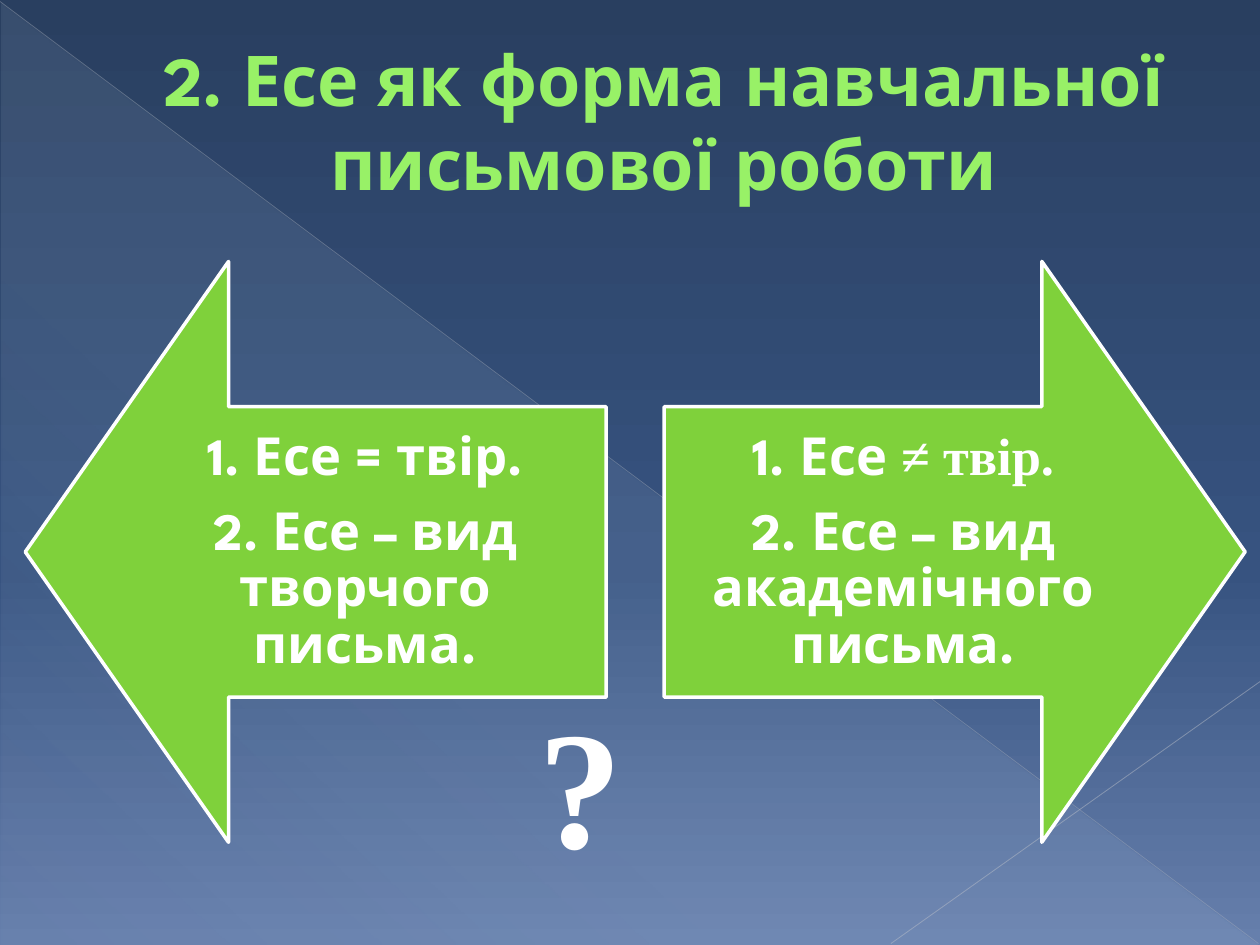
from dataclasses import dataclass

from pptx import Presentation
from pptx.dml.color import RGBColor
from pptx.enum.shapes import MSO_CONNECTOR, MSO_SHAPE
from pptx.enum.text import MSO_ANCHOR, MSO_AUTO_SIZE, PP_ALIGN
from pptx.oxml import parse_xml
from pptx.oxml.ns import qn
from pptx.util import Cm, Pt

NS = 'xmlns:a="http://schemas.openxmlformats.org/drawingml/2006/main"'
CENTER, MIDDLE, NO_FIT = PP_ALIGN.CENTER, MSO_ANCHOR.MIDDLE, MSO_AUTO_SIZE.NONE
STRAIGHT = MSO_CONNECTOR.STRAIGHT
TRIANGLE, UP_ARROW = MSO_SHAPE.RIGHT_TRIANGLE, MSO_SHAPE.UP_ARROW
SANS, SERIF = "League Spartan", "Times New Roman"
COLORS = {
    "sky_top": "293F60", "sky_middle": "375380", "sky_bottom": "667FAC",
    "glow": "D6ECFF", "long_ray": "B7BCC5", "short_ray": "BFC3CB",
    "title": "98F167", "title_edge": "589129", "arrow": "7FD13B", "white": "FFFFFF",
}


@dataclass
class Stop:
    position: int
    color: str
    opacity: int = 100


@dataclass
class Ray:
    start: tuple[float, float]
    end: tuple[float, float]
    color: str
    width: float
    opacity: int


@dataclass
class Span:
    text: str
    font: str = SANS


@dataclass
class Opinion:
    arrow_left: float
    text_left: float
    rotation: int
    paragraphs: list[list[Span]]


RAYS = [
    Ray((0, 0.03), (25.37, 19.02), "long_ray", 0.39, 35),
    Ray((25.4, 13.74), (17.96, 19.02), "short_ray", 0.47, 45),
]
OPINIONS = [
    Opinion(0.51, 2.54, 270, [
        [Span("1. Есе = твір.")],
        [Span("2. Есе – вид творчого письма.")],
    ]),
    Opinion(13.39, 13.39, 90, [
        [Span("1. Есе "), Span("≠ твір.", SERIF)],
        [Span("2. Есе – вид академічного письма.")],
    ]),
]


def rgb(name: str) -> RGBColor:
    return RGBColor.from_string(COLORS[name])


def gradient(stops: list[Stop], angle: int):
    marks = "".join(
        f'<a:gs pos="{stop.position * 1000}"><a:srgbClr val="{COLORS[stop.color]}">'
        f'<a:alpha val="{stop.opacity * 1000}"/></a:srgbClr></a:gs>'
        for stop in stops
    )
    return parse_xml(
        f'<a:gradFill {NS} rotWithShape="1"><a:gsLst>{marks}</a:gsLst>'
        f'<a:lin ang="{angle * 60000}" scaled="0"/></a:gradFill>'
    )


def use_gradient(fill, parent, stops: list[Stop], angle: int) -> None:
    fill.solid()
    solid = parent.find(".//" + qn("a:solidFill"))
    solid.getparent().replace(solid, gradient(stops, angle))


def add_span(para, span: Span, size: int, color: str = "white"):
    run = para.add_run()
    run.text = span.text
    run.font.name = span.font
    run.font.size = Pt(size)
    run.font.bold = True
    run.font.color.rgb = rgb(color)
    return run


def draw_backdrop(page) -> None:
    use_gradient(page.background.fill, page.element, [
        Stop(0, "sky_top"), Stop(60, "sky_middle"), Stop(100, "sky_bottom"),
    ], 90)
    glow = page.shapes.add_shape(TRIANGLE, Cm(0.03), Cm(0.05), Cm(25.35), Cm(19))
    glow.shadow.inherit = False
    use_gradient(glow.fill, glow.element.spPr, [
        Stop(0, "glow", 10), Stop(70, "glow", 8), Stop(100, "glow", 1),
    ], 133)
    glow.line.fill.background()
    for ray in RAYS:
        draw_ray(page, ray)


def draw_ray(page, ray: Ray) -> None:
    points = [Cm(value) for value in ray.start + ray.end]
    line = page.shapes.add_connector(STRAIGHT, *points)
    line.line.width = Pt(ray.width)
    line.line.color.rgb = rgb(ray.color)
    properties = line.element.spPr
    properties.find(".//" + qn("a:srgbClr")).append(
        parse_xml(f'<a:alpha {NS} val="{ray.opacity * 1000}"/>'))
    properties.append(parse_xml(f"<a:effectLst {NS}/>"))


def draw_title(page) -> None:
    title = page.shapes.title
    page.shapes.element.append(title.element)
    title.left, title.top, title.width, title.height = Cm(1.27), Cm(0.74), Cm(22.86), Cm(3.38)
    frame = title.text_frame
    frame.word_wrap = True
    frame.auto_size = NO_FIT
    frame.vertical_anchor = MIDDLE
    para = frame.paragraphs[0]
    para.alignment = CENTER
    para._p.get_or_add_pPr().set("marL", str(Cm(1.35)))
    run = add_span(para, Span("2. Есе як форма навчальної письмової роботи"), 40, "title")
    run.font._element.insert(0, parse_xml(
        f'<a:ln {NS} w="{Pt(0.5)}"><a:solidFill>'
        f'<a:srgbClr val="{COLORS["title_edge"]}"/></a:solidFill></a:ln>'))


def add_text(page, left: float, top: float, width: float, height: float,
             inset: float, paragraphs: list[list[Span]], size: int,
             spacing: float = 1, after: float = 0) -> None:
    box = page.shapes.add_textbox(Cm(left), Cm(top), Cm(width), Cm(height))
    frame = box.text_frame
    frame.word_wrap = True
    frame.auto_size = NO_FIT
    frame.vertical_anchor = MIDDLE
    frame.margin_left = frame.margin_right = Cm(inset)
    frame.margin_top = frame.margin_bottom = Cm(inset)
    for index, spans in enumerate(paragraphs):
        para = frame.add_paragraph() if index else frame.paragraphs[0]
        para.alignment = CENTER
        para.line_spacing = spacing
        para.space_after = Pt(after)
        for span in spans:
            add_span(para, span, size)


def draw_opinion(page, opinion: Opinion) -> None:
    side = Cm(11.71)
    arrow = page.shapes.add_shape(UP_ARROW, Cm(opinion.arrow_left), Cm(5.27), side, side)
    arrow.rotation = opinion.rotation
    arrow.adjustments[0] = 0.5
    arrow.adjustments[1] = 0.35
    arrow.shadow.inherit = False
    arrow.fill.solid()
    arrow.fill.fore_color.rgb = rgb("arrow")
    arrow.line.color.rgb = rgb("white")
    arrow.line.width = Pt(2)
    add_text(page, opinion.text_left, 8.2, 9.65, 5.87, 0.58,
             opinion.paragraphs, 30, spacing=0.9, after=10.5)


def main() -> None:
    deck = Presentation()
    deck.slide_width, deck.slide_height = Cm(25.4), Cm(19.05)
    page = deck.slides.add_slide(deck.slide_layouts[5])
    draw_backdrop(page)
    draw_title(page)
    add_text(page, 10.4, 13.87, 2.6, 3.75, 0, [[Span("?", SERIF)]], 96)
    for opinion in OPINIONS:
        draw_opinion(page, opinion)
    deck.save("out.pptx")


if __name__ == "__main__":
    main()
